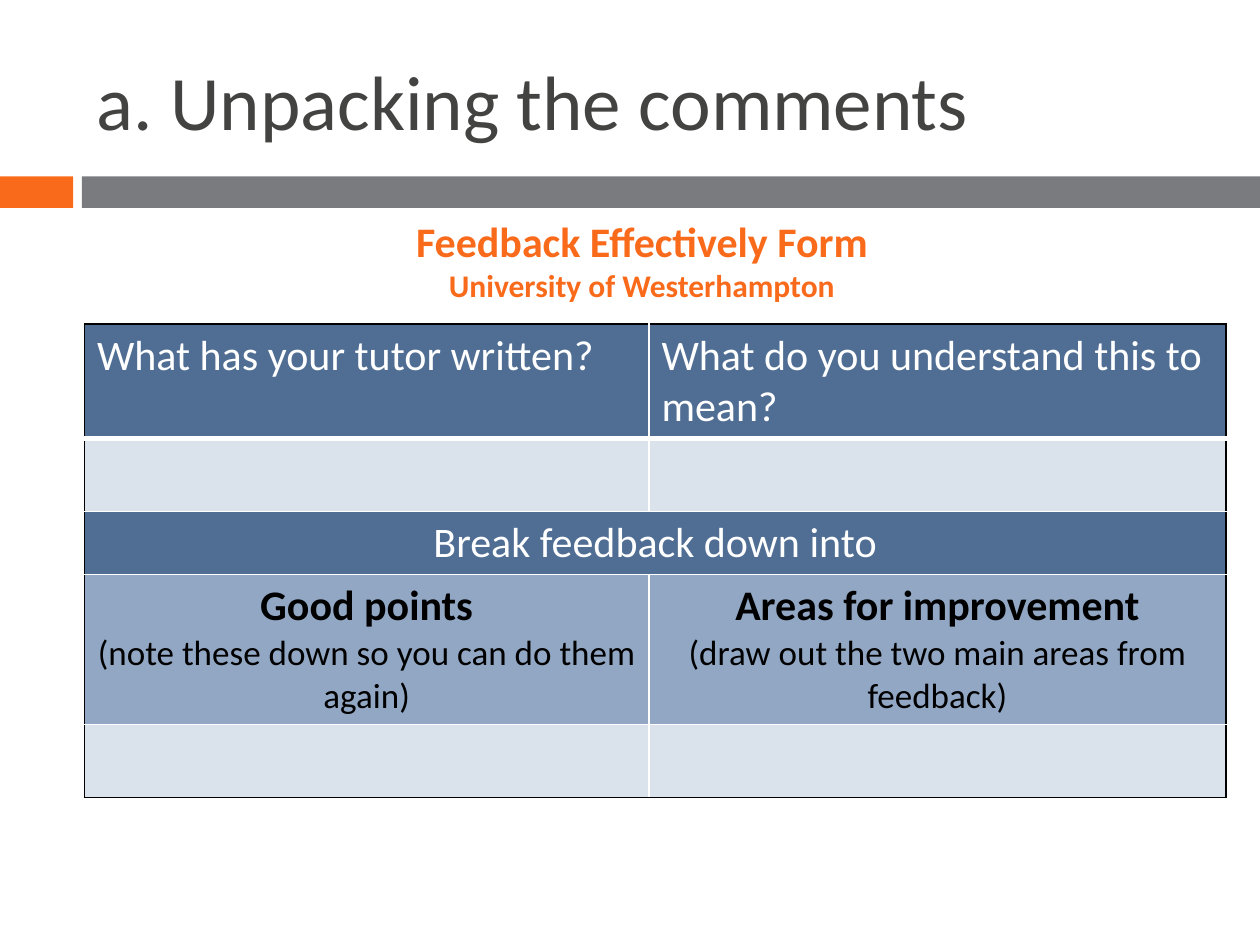
from lxml.etree import SubElement
from pptx import Presentation
from pptx.dml.color import RGBColor
from pptx.enum.shapes import MSO_SHAPE as Shape
from pptx.enum.text import MSO_ANCHOR as Anchor, PP_ALIGN as Align
from pptx.oxml.ns import qn
from pptx.util import Inches, Pt

ORANGE = RGBColor(0xF9, 0x6A, 0x1B)
GRAY = RGBColor(0x79, 0x7B, 0x7E)
CHARCOAL = RGBColor(0x43, 0x43, 0x42)
NAVY = RGBColor(0x50, 0x6E, 0x94)
BLUE = RGBColor(0x91, 0xA7, 0xC4)
PALE = RGBColor(0xDA, 0xE2, 0xEB)
WHITE = RGBColor(0xFF, 0xFF, 0xFF)
BLACK = RGBColor(0, 0, 0)

COLUMN_WIDTHS = [4.48, 4.58]
ROW_HEIGHTS = [0.91, 0.58, 0.5, 1.19, 0.58]
ROW_FILLS = [NAVY, PALE, NAVY, BLUE, PALE]


def write(frame, text, size=24, color=BLACK, bold=False, align=Align.LEFT):
    """Fill the empty first paragraph, or add a new one."""
    para = frame.paragraphs[-1]
    if para.runs:
        para = frame.add_paragraph()
    para.alignment = align
    span = para.add_run()
    span.text = text
    span.font.name = "Calibri"
    span.font.size = Pt(size)
    span.font.bold = bold
    span.font.color.rgb = color


def add_bar(page, left, width, color):
    bar = page.shapes.add_shape(
        Shape.RECTANGLE, Inches(left), Inches(1.4), Inches(width), Inches(0.25))
    bar.shadow.inherit = False
    bar.fill.solid()
    bar.fill.fore_color.rgb = color
    bar.line.fill.background()


def add_text_box(page, left, top, width, height, anchor=Anchor.TOP):
    box = page.shapes.add_textbox(
        Inches(left), Inches(top), Inches(width), Inches(height))
    box.text_frame.word_wrap = True
    box.text_frame.vertical_anchor = anchor
    return box.text_frame


def set_border(cell, side, color, width=1):
    line = SubElement(cell._tc.get_or_add_tcPr(), qn(f"a:ln{side}"), w=str(Pt(width)))
    fill = SubElement(line, qn("a:solidFill"))
    SubElement(fill, qn("a:srgbClr"), val=str(color))


def style_cell(cell, row, column):
    """Black on the outer edge, white inside, thicker under the header."""
    last_row, last_column = len(ROW_HEIGHTS) - 1, len(COLUMN_WIDTHS) - 1
    set_border(cell, "L", BLACK if column == 0 else WHITE)
    set_border(cell, "R", BLACK if column == last_column or cell.is_merge_origin else WHITE)
    set_border(cell, "T", BLACK if row == 0 else WHITE, 3 if row == 1 else 1)
    set_border(cell, "B", BLACK if row == last_row else WHITE, 3 if row == 0 else 1)
    cell.fill.solid()
    cell.fill.fore_color.rgb = ROW_FILLS[row]


def add_feedback_table(page):
    table = page.shapes.add_table(
        len(ROW_HEIGHTS), len(COLUMN_WIDTHS), Inches(0.67), Inches(2.57),
        Inches(sum(COLUMN_WIDTHS)), Inches(sum(ROW_HEIGHTS))).table
    for column, width in zip(table.columns, COLUMN_WIDTHS):
        column.width = Inches(width)
    for row, height in zip(table.rows, ROW_HEIGHTS):
        row.height = Inches(height)
    table.cell(2, 0).merge(table.cell(2, 1))
    for row in range(len(ROW_HEIGHTS)):
        for column in range(len(COLUMN_WIDTHS)):
            style_cell(table.cell(row, column), row, column)

    # Wording
    questions = ["What has your tutor written?", "What do you understand this to mean?"]
    for column, question in enumerate(questions):
        write(table.cell(0, column).text_frame, question, color=WHITE)
    write(table.cell(2, 0).text_frame, "Break feedback down into",
          color=WHITE, align=Align.CENTER)
    parts = [("Good points", "(note these down so you can do them again)"),
             ("Areas for improvement", "(draw out the two main areas from feedback)")]
    for column, (heading, hint) in enumerate(parts):
        frame = table.cell(3, column).text_frame
        write(frame, heading, bold=True, align=Align.CENTER)
        write(frame, hint, size=20, align=Align.CENTER)


def main():
    deck = Presentation()
    deck.slide_width, deck.slide_height = Inches(10), Inches(7.5)
    page = deck.slides.add_slide(deck.slide_layouts[6])

    # Title and divider
    add_bar(page, 0, 0.58, ORANGE)
    add_bar(page, 0.65, 9.35, GRAY)
    title = add_text_box(page, 0.67, 0.25, 8.92, 1.08, Anchor.MIDDLE)
    write(title, "a. Unpacking the comments", size=44, color=CHARCOAL)

    # Feedback form
    add_feedback_table(page)
    caption = add_text_box(page, 0.67, 1.66, 8.85, 0.81)
    for text, size in [("Feedback Effectively Form", 24),
                       ("University of Westerhampton", 18)]:
        write(caption, text, size=size, color=ORANGE, bold=True, align=Align.CENTER)

    deck.save("out.pptx")


if __name__ == "__main__":
    main()
